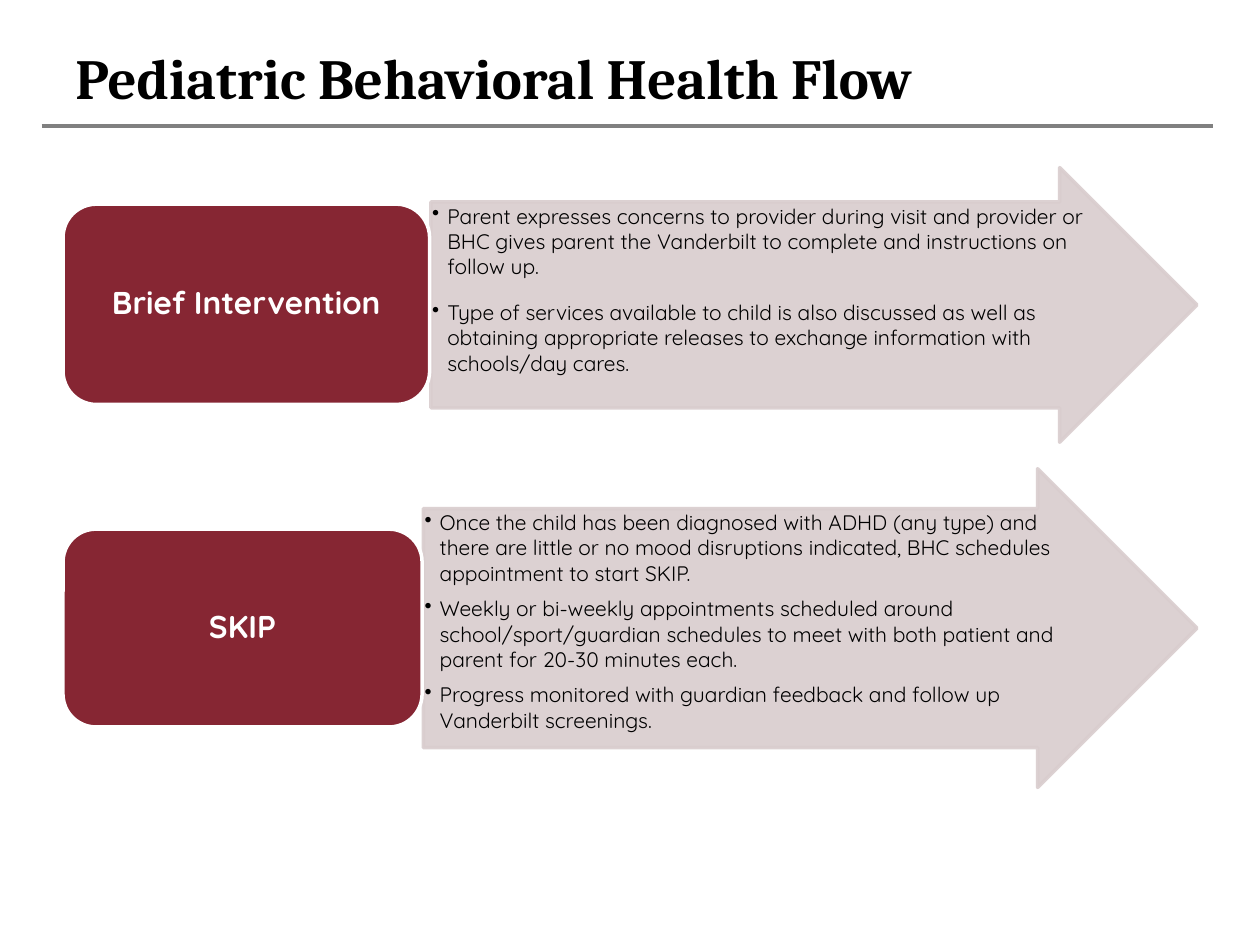
from dataclasses import dataclass

from lxml.etree import SubElement
from pptx import Presentation
from pptx.dml.color import RGBColor
from pptx.enum.shapes import MSO_CONNECTOR, MSO_SHAPE
from pptx.enum.text import MSO_ANCHOR, PP_ALIGN
from pptx.oxml.ns import qn
from pptx.util import Inches, Pt

COLORS = {
    "title": "000000",
    "rule": "808080",
    "arrow": "D9CDCE",
    "label": "862633",
    "white": "FFFFFF",
    "body": "000000",
}
LEFT_EDGE = 0.5
RIGHT_EDGE = 9.5


@dataclass
class Box:
    left: float
    top: float
    width: float
    height: float


@dataclass
class Stage:
    label: str
    label_box: Box
    arrow_box: Box
    space_after: float
    bullets: list[str]


STAGES = [
    Stage(
        "Brief Intervention",
        Box(LEFT_EDGE, 1.62, 2.91, 1.59),
        Box(3.42, 1.33, RIGHT_EDGE - 3.42, 2.18),
        12,
        [
            "Parent expresses concerns to provider during visit and provider or BHC "
            "gives parent the Vanderbilt to complete and instructions on follow up.",
            "Type of services available to child is also discussed as well as obtaining "
            "appropriate releases to exchange information with schools/day cares.",
        ],
    ),
    Stage(
        "SKIP",
        Box(LEFT_EDGE, 4.2, 2.85, 1.57),
        Box(3.36, 3.72, RIGHT_EDGE - 3.36, 2.53),
        6,
        [
            "Once the child has been diagnosed with ADHD (any type) and there are little "
            "or no mood disruptions indicated, BHC schedules appointment to start SKIP.",
            "Weekly or bi-weekly appointments scheduled around school/sport/guardian "
            "schedules to meet with both patient and parent for 20-30 minutes each.",
            "Progress monitored with guardian feedback and follow up Vanderbilt screenings.",
        ],
    ),
]


def color(name: str) -> RGBColor:
    return RGBColor.from_string(COLORS[name])


def add_run(paragraph, text: str, font: str, size: float, color_name: str, bold: bool = False) -> None:
    run = paragraph.add_run()
    run.text = text
    run.font.name = font
    run.font.size = Pt(size)
    run.font.bold = bold
    run.font.color.rgb = color(color_name)


def set_frame(frame, anchor: MSO_ANCHOR, side: float, edge: float) -> None:
    frame.word_wrap = True
    frame.vertical_anchor = anchor
    frame.margin_left = frame.margin_right = Inches(side)
    frame.margin_top = frame.margin_bottom = Inches(edge)


def add_block(slide, preset: MSO_SHAPE, box: Box, fill: str, line: str):
    shape = slide.shapes.add_shape(
        preset, Inches(box.left), Inches(box.top), Inches(box.width), Inches(box.height)
    )
    shape.shadow.inherit = False
    shape.fill.solid()
    shape.fill.fore_color.rgb = color(fill)
    shape.line.color.rgb = color(line)
    shape.line.width = Pt(2)
    return shape


def set_opacity(shape, percent: int) -> None:
    for element in shape._element.spPr.iter(qn("a:srgbClr")):
        SubElement(element, qn("a:alpha"), val=str(percent * 1000))


def add_bullet(paragraph) -> None:
    properties = paragraph._p.get_or_add_pPr()
    indent = Inches(0.12)
    properties.set("marL", str(indent))
    properties.set("indent", str(-indent))
    SubElement(properties, qn("a:buChar"), char="•")


def add_arrow(slide, stage: Stage) -> None:
    arrow = add_block(slide, MSO_SHAPE.RIGHT_ARROW, stage.arrow_box, "arrow", "arrow")
    arrow.adjustments[0] = 0.75
    arrow.adjustments[1] = 0.5
    set_opacity(arrow, 90)
    frame = arrow.text_frame
    set_frame(frame, MSO_ANCHOR.TOP, 0.01, 0.01)
    for index, text in enumerate(stage.bullets):
        paragraph = frame.add_paragraph() if index else frame.paragraphs[0]
        add_bullet(paragraph)
        paragraph.alignment = PP_ALIGN.LEFT
        paragraph.space_after = Pt(stage.space_after)
        add_run(paragraph, text, "Quicksand", 12, "body")


def add_label(slide, stage: Stage) -> None:
    label = add_block(slide, MSO_SHAPE.ROUNDED_RECTANGLE, stage.label_box, "label", "white")
    set_frame(label.text_frame, MSO_ANCHOR.MIDDLE, 0.07, 0.04)
    paragraph = label.text_frame.paragraphs[0]
    paragraph.alignment = PP_ALIGN.CENTER
    paragraph.line_spacing = 0.9
    add_run(paragraph, stage.label, "Quicksand", 18, "white", bold=True)


def add_header(slide) -> None:
    rule = slide.shapes.add_connector(
        MSO_CONNECTOR.STRAIGHT, Inches(0.33), Inches(1), Inches(9.63), Inches(1)
    )
    rule.line.color.rgb = color("rule")
    rule.line.width = Pt(2.25)
    SubElement(rule._element.spPr, qn("a:effectLst"))
    title = slide.shapes.add_textbox(Inches(LEFT_EDGE), Inches(0.3), Inches(9), Inches(0.62))
    set_frame(title.text_frame, MSO_ANCHOR.MIDDLE, 0.1, 0.05)
    add_run(
        title.text_frame.paragraphs[0],
        "Pediatric Behavioral Health Flow", "Cambria", 32.4, "title", bold=True,
    )


def main() -> None:
    presentation = Presentation()
    presentation.slide_width = Inches(10)
    presentation.slide_height = Inches(7.5)
    slide = presentation.slides.add_slide(presentation.slide_layouts[6])
    add_header(slide)
    for stage in STAGES:
        add_arrow(slide, stage)
        add_label(slide, stage)
    presentation.save("out.pptx")


if __name__ == "__main__":
    main()
